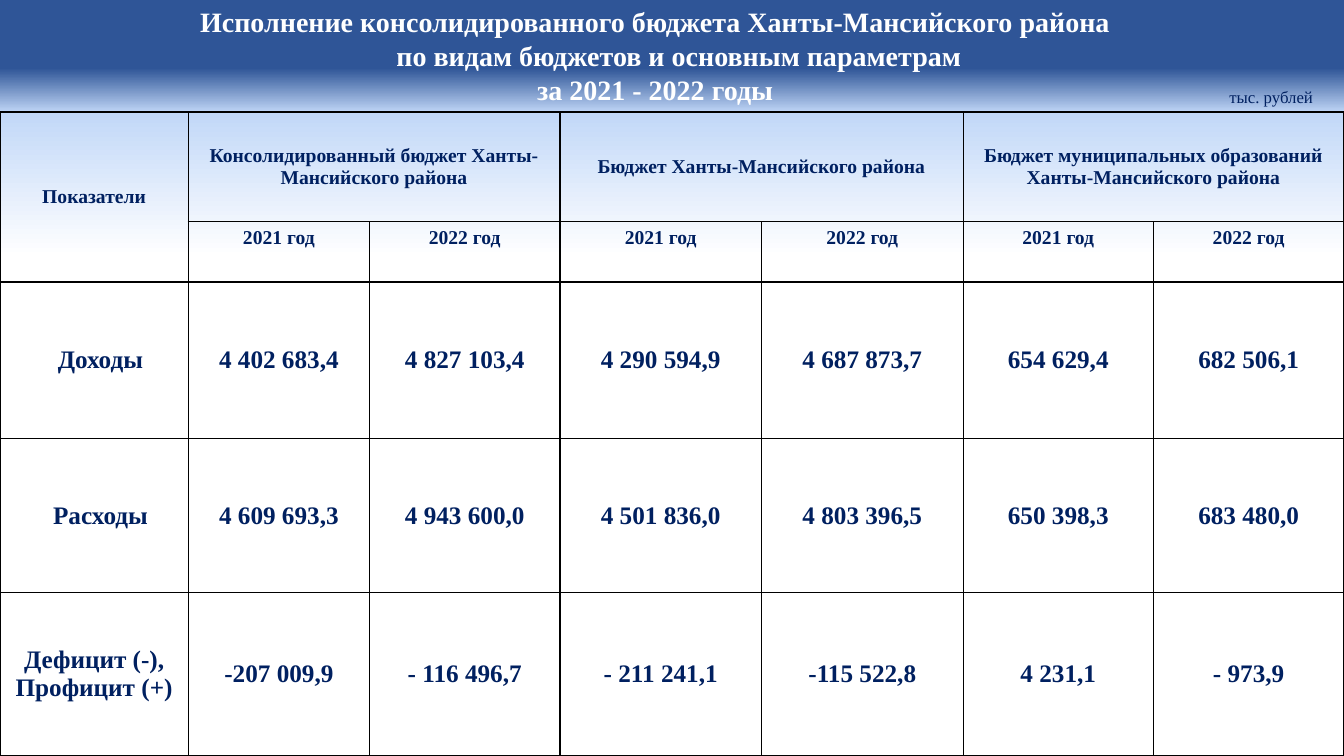
from copy import deepcopy

from lxml import etree
from pptx import Presentation
from pptx import util as u
from pptx.dml.color import RGBColor
from pptx.enum import text
from pptx.oxml import ns

FONT = "Times New Roman"
WHITE = RGBColor(0xFF, 0xFF, 0xFF)
BLACK = RGBColor(0, 0, 0)
NAVY = RGBColor(0x00, 0x20, 0x60)
BLUE = RGBColor(0x2F, 0x55, 0x97)
SKY = RGBColor(0xC2, 0xD8, 0xF8)

SLIDE_WIDTH, SLIDE_HEIGHT, HEADER_HEIGHT = 960, 540, 80
COLUMN_WIDTHS = [134.5, 129.5, 136, 144, 144, 136, 136]
ROW_HEIGHTS = [78.5, 43, 112, 110, 116.5]
TITLE = [
    ("Исполнение консолидированного бюджета Ханты-Мансийского района", 0, 36),
    ("по видам бюджетов и основным параметрам", 34, 0),
    ("за 2021 - 2022 годы", 0, 0),
]
BUDGETS = [
    "Консолидированный бюджет Ханты-Мансийского района",
    "Бюджет Ханты-Мансийского района",
    "Бюджет муниципальных образований Ханты-Мансийского района",
]
YEARS = ["2021 год", "2022 год"]
INDICATORS = [
    ("Доходы", 9, ["4 402 683,4", "4 827 103,4", "4 290 594,9",
                   "4 687 873,7", "654 629,4", "682 506,1"]),
    ("Расходы", 9, ["4 609 693,3", "4 943 600,0", "4 501 836,0",
                    "4 803 396,5", "650 398,3", "683 480,0"]),
    ("Дефицит (-), Профицит (+)", 0, ["-207 009,9", "- 116 496,7", "- 211 241,1",
                                      "-115 522,8", "4 231,1", "- 973,9"]),
]


def write(paragraph, words, size, color, bold=True, align=text.PP_ALIGN.CENTER,
          left=0, right=0):
    paragraph.alignment = align
    properties = paragraph._p.get_or_add_pPr()
    for side, indent in (("marL", left), ("marR", right)):
        if indent:
            properties.set(side, str(u.Pt(indent)))
    run = paragraph.add_run()
    run.text = words
    run.font.name = FONT
    run.font.size = u.Pt(size)
    run.font.bold = bold
    run.font.color.rgb = color


def paint_background(slide):
    fill = slide.background.fill
    fill.gradient()
    fill.gradient_angle = 270
    first_stop = fill.gradient_stops[0]._gs
    first_stop.addnext(deepcopy(first_stop))
    for stop, (position, color) in zip(
            fill.gradient_stops, [(0.09, BLUE), (0.15, SKY), (0.34, WHITE)]):
        stop.position = position
        stop.color.rgb = color


def add_text_frame(slide, left, top, width, height):
    frame = slide.shapes.add_textbox(
        u.Pt(left), u.Pt(top), u.Pt(width), u.Pt(height)).text_frame
    frame.word_wrap = True
    return frame


def add_header(slide, left, top, width, height):
    title = add_text_frame(slide, left + 133, top, width - 254, height)
    for index, (line, indent, margin) in enumerate(TITLE):
        paragraph = title.add_paragraph() if index else title.paragraphs[0]
        write(paragraph, line, 20, WHITE, left=indent, right=margin)
    unit = add_text_frame(slide, left + width - 89, top + height - 21.5, 80, 21.5)
    write(unit.paragraphs[0], "тыс. рублей", 12, NAVY, False, text.PP_ALIGN.LEFT)


def outline(cell):
    properties = cell._tc.get_or_add_tcPr()
    for position, side in enumerate(("lnL", "lnR", "lnT", "lnB")):
        line = etree.Element(ns.qn("a:" + side), w=str(u.Pt(1)))
        solid = etree.SubElement(line, ns.qn("a:solidFill"))
        etree.SubElement(solid, ns.qn("a:srgbClr"), val=str(BLACK))
        properties.insert(position, line)


def fill_cell(cell, words, size, compact=False, middle=True, indent=0):
    if middle:
        cell.vertical_anchor = text.MSO_ANCHOR.MIDDLE
    if compact:
        cell.margin_left = cell.margin_right = u.Pt(4.5)
        cell.margin_top = cell.margin_bottom = 0
    write(cell.text_frame.paragraphs[0], words, size, NAVY, left=indent)


def add_budget_table(slide, left, top, width, height):
    budget = slide.shapes.add_table(
        len(ROW_HEIGHTS), len(COLUMN_WIDTHS),
        u.Pt(left), u.Pt(top), u.Pt(width), u.Pt(height)).table
    budget.first_row = budget.horz_banding = False
    for column, share in zip(budget.columns, COLUMN_WIDTHS):
        column.width = u.Pt(width * share / sum(COLUMN_WIDTHS))
    for row, share in zip(budget.rows, ROW_HEIGHTS):
        row.height = u.Pt(height * share / sum(ROW_HEIGHTS))
    for cell in budget.iter_cells():
        cell.fill.background()
        outline(cell)

    budget.cell(0, 0).merge(budget.cell(1, 0))
    fill_cell(budget.cell(0, 0), "Показатели", 14, compact=True)
    for group, name in enumerate(BUDGETS):
        start = 1 + group * len(YEARS)
        budget.cell(0, start).merge(budget.cell(0, start + len(YEARS) - 1))
        fill_cell(budget.cell(0, start), name, 14, compact=True)
        for offset, year in enumerate(YEARS):
            fill_cell(budget.cell(1, start + offset), year, 14, middle=False)
    for row, (indicator, indent, amounts) in enumerate(INDICATORS, 2):
        fill_cell(budget.cell(row, 0), indicator, 18, compact=True, indent=indent)
        for column, amount in enumerate(amounts, 1):
            fill_cell(budget.cell(row, column), amount, 18)


def main():
    deck = Presentation()
    deck.slide_width = u.Pt(SLIDE_WIDTH)
    deck.slide_height = u.Pt(SLIDE_HEIGHT)
    slide = deck.slides.add_slide(deck.slide_layouts[6])
    paint_background(slide)
    add_header(slide, 0, 0, SLIDE_WIDTH, HEADER_HEIGHT)
    add_budget_table(slide, 0, HEADER_HEIGHT, SLIDE_WIDTH, SLIDE_HEIGHT - HEADER_HEIGHT)
    deck.save("out.pptx")


if __name__ == "__main__":
    main()
